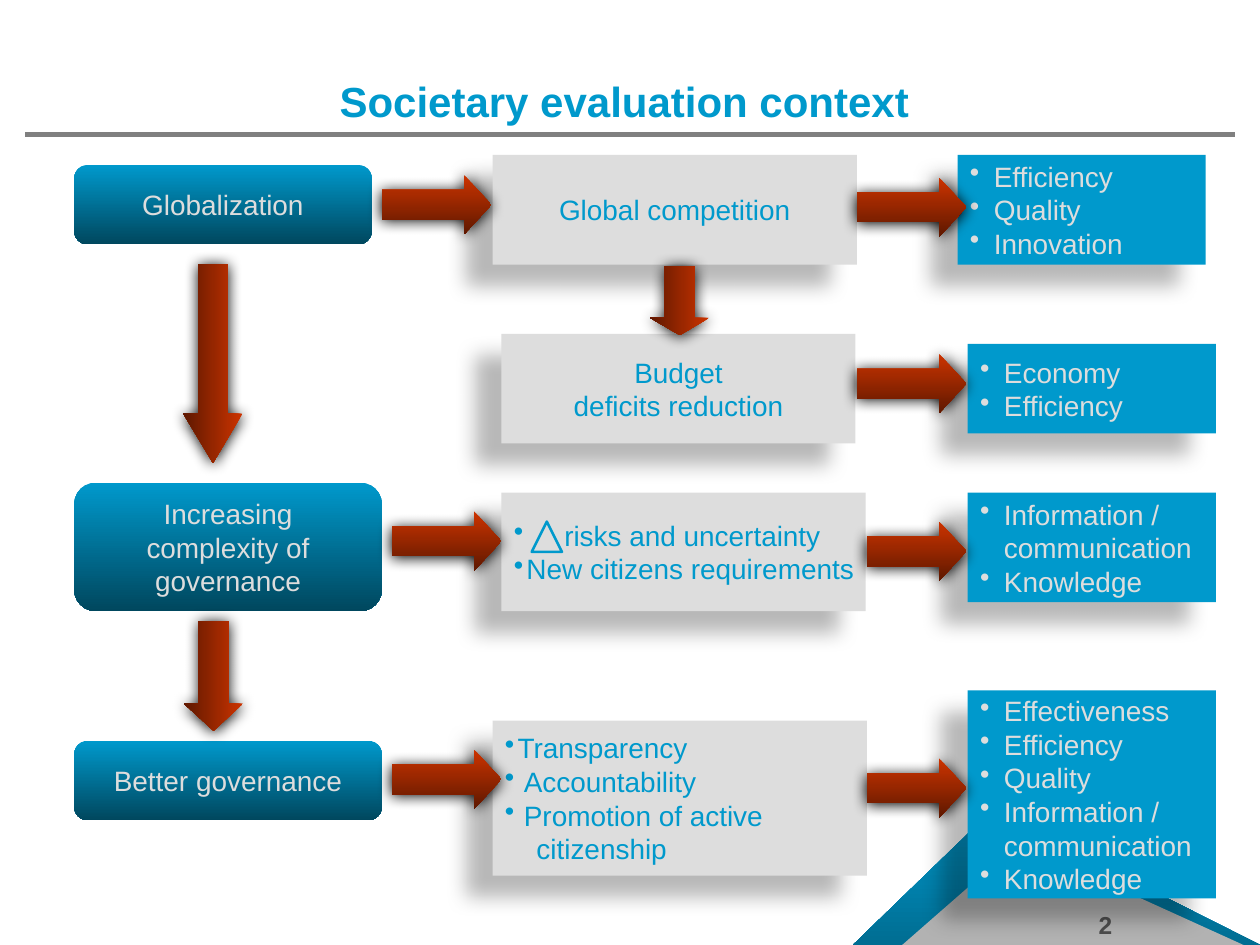
"""Build the slide on the societary context of evaluation."""
from dataclasses import dataclass

import lxml.etree
import pptx
import pptx.dml.color
import pptx.enum.shapes
import pptx.enum.text
import pptx.oxml.ns
import pptx.util

Inches = pptx.util.Inches
Shapes = pptx.enum.shapes.MSO_SHAPE
Align = pptx.enum.text.PP_ALIGN
Anchor = pptx.enum.text.MSO_ANCHOR
qn = pptx.oxml.ns.qn

BLUE, GREY = "0099CC", "DDDDDD"
BOX_SHADOW = {"alpha": 28, "blurRad": 11.8, "dist": 19.7, "dir": 141}
ARROW_SHADOW = {"alpha": 100, "blurRad": 8.5, "dist": 1, "dir": 90}


@dataclass
class Place:
    left: float
    top: float
    width: float
    height: float

    def lengths(self) -> list:
        return [Inches(v) for v in (self.left, self.top, self.width, self.height)]


@dataclass
class Line:
    text: str
    margin: float = 0
    bullet: bool = False


@dataclass
class Box:
    place: Place
    lines: list
    fill: str
    ink: str


@dataclass
class Arrow:
    place: Place
    head: float = 0.459
    rotation: int = 0


def plain(*texts: str) -> list:
    return [Line(text) for text in texts]


def bullets(margin: float, *texts: str) -> list:
    return [Line(text, margin, True) for text in texts]


def color(value: str) -> pptx.dml.color.RGBColor:
    return pptx.dml.color.RGBColor.from_string(value)


def assign(target, values: dict) -> None:
    for name, value in values.items():
        setattr(target, name, value)


def paint(shape, *fills: str) -> None:
    if len(fills) == 1:
        shape.fill.solid()
        shape.fill.fore_color.rgb = color(fills[0])
        return
    shape.fill.gradient()
    shape.fill.gradient_angle = 270
    for position, (stop, value) in enumerate(zip(shape.fill.gradient_stops, fills)):
        stop.position = position
        stop.color.rgb = color(value)


def add_shape(page, kind, place: Place, *fills: str):
    shape = page.shapes.add_shape(kind, *place.lengths())
    shape.shadow.inherit = False
    paint(shape, *fills)
    shape.line.fill.background()
    return shape


def cast_shadow(shape, values: dict) -> None:
    effects = shape._element.spPr.find(qn("a:effectLst"))
    shadow = lxml.etree.SubElement(effects, qn("a:outerShdw"), algn="ctr", rotWithShape="0")
    for name in ("blurRad", "dist"):
        shadow.set(name, str(int(pptx.util.Pt(values[name]))))
    shadow.set("dir", str(values["dir"] * 60000))
    tint = lxml.etree.SubElement(shadow, qn("a:srgbClr"), val="000000")
    lxml.etree.SubElement(tint, qn("a:alpha"), val=str(values["alpha"] * 1000))


def write(shape, lines: list, ink: str, align, frame: dict, size: int = 16, bold: bool = False) -> None:
    assign(shape.text_frame, frame)
    for index, line in enumerate(lines):
        para = shape.text_frame.add_paragraph() if index else shape.text_frame.paragraphs[0]
        para.alignment = align
        if line.margin:
            properties = para._p.get_or_add_pPr()
            margin = int(Inches(line.margin))
            properties.set("marL", str(margin))
            properties.set("indent", str(-margin if line.bullet else 0))
        if line.bullet:
            lxml.etree.SubElement(properties, qn("a:buChar"), char="•")
        span = para.add_run()
        span.text = line.text
        assign(span.font, {"name": "Arial", "size": pptx.util.Pt(size), "bold": bold})
        span.font.color.rgb = color(ink)


def add_label(page, place: Place, text: str, ink: str, align, size: int) -> None:
    label = page.shapes.add_textbox(*place.lengths())
    write(label, plain(text), ink, align, {"word_wrap": True}, size, True)


def add_backdrop(page) -> None:
    peaks = [(Place(6.77, 6.43, 3.23, 1.07), (BLUE, "006D92")),
             (Place(7.16, 6.69, 2.71, 0.81), ("B2B2B2",))]
    for place, fills in peaks:
        peak = add_shape(page, Shapes.ISOSCELES_TRIANGLE, place, *fills)
        peak.adjustments[0] = 0.342
    rule = page.shapes.add_connector(
        pptx.enum.shapes.MSO_CONNECTOR.STRAIGHT,
        Inches(0.2), Inches(1.07), Inches(9.8), Inches(1.07))
    rule.line.color.rgb = color("808080")
    rule.line.width = pptx.util.Pt(3)
    lxml.etree.SubElement(rule._element.spPr, qn("a:effectLst"))


def add_box(page, box: Box, kind, align, *fills: str):
    shape = add_shape(page, kind, box.place, *fills)
    write(shape, box.lines, box.ink, align, {"word_wrap": False, "vertical_anchor": Anchor.MIDDLE})
    return shape


def add_arrow(page, arrow: Arrow) -> None:
    shape = add_shape(page, Shapes.RIGHT_ARROW, arrow.place, "CC3300", "5E1800")
    shape.adjustments[0] = 0.5
    shape.adjustments[1] = arrow.head
    shape.rotation = arrow.rotation
    cast_shadow(shape, ARROW_SHADOW)


DRIVERS = [
    Box(Place(0.59, 1.31, 2.36, 0.63), plain("Globalization"), BLUE, GREY),
    Box(Place(0.59, 3.83, 2.44, 1.02), plain("Increasing", "complexity of", "governance"), BLUE, GREY),
    Box(Place(0.59, 5.88, 2.44, 0.63), plain("Better governance"), BLUE, GREY),
]
COMMUNICATION = bullets(0.19, "Information /") + [Line("communication", 0.19)] + bullets(0.19, "Knowledge")
EFFECTS = [
    Box(Place(3.91, 1.23, 2.89, 0.87), plain("Global competition"), GREY, BLUE),
    Box(Place(3.98, 2.65, 2.81, 0.87), plain("Budget", "deficits reduction"), GREY, BLUE),
    Box(Place(3.98, 3.91, 2.89, 0.94),
        bullets(0.4, "risks and uncertainty") + bullets(0.1, "New citizens requirements"), GREY, BLUE),
    Box(Place(3.91, 5.72, 2.97, 1.23),
        bullets(0.1, "Transparency") + bullets(0.15, "Accountability", "Promotion of active")
        + [Line("citizenship", 0.25)], GREY, BLUE),
    Box(Place(7.6, 1.23, 1.97, 0.87), bullets(0.19, "Efficiency", "Quality", "Innovation"), BLUE, GREY),
    Box(Place(7.68, 2.73, 1.97, 0.71), bullets(0.19, "Economy", "Efficiency"), BLUE, GREY),
    Box(Place(7.68, 3.91, 1.97, 0.87), COMMUNICATION, BLUE, GREY),
    Box(Place(7.68, 5.48, 1.97, 1.65),
        bullets(0.19, "Effectiveness", "Efficiency", "Quality") + COMMUNICATION, BLUE, GREY),
]
ACROSS = [(3.11, 5.95, 0.87), (3.11, 4.06, 0.87), (3.03, 1.39, 0.87), (6.8, 1.41, 0.87),
          (6.8, 2.81, 0.87), (6.88, 4.14, 0.79), (6.88, 6.02, 0.79)]
ARROWS = [
    Arrow(Place(0.9, 2.65, 1.58, 0.47), 0.835, 90),
    Arrow(Place(1.26, 5.13, 0.87, 0.47), 0.459, 90),
    *[Arrow(Place(left, top, width, 0.47)) for left, top, width in ACROSS],
    Arrow(Place(5.12, 2.15, 0.55, 0.47), 0.292, 90),
]


def main() -> None:
    deck = pptx.Presentation()
    assign(deck, {"slide_width": Inches(10), "slide_height": Inches(7.5)})
    page = deck.slides.add_slide(deck.slide_layouts[6])
    add_backdrop(page)
    add_label(page, Place(8.62, 7.17, 0.55, 0.33), "2", "4D4D4D", Align.LEFT, 14)
    add_label(page, Place(0.31, 0.55, 9.29, 0.5), "Societary evaluation context", BLUE, Align.CENTER, 24)
    for box in DRIVERS:
        add_box(page, box, Shapes.FLOWCHART_ALTERNATE_PROCESS, Align.CENTER, box.fill, "00475E")
    for box in EFFECTS:
        align = Align.LEFT if box.lines[0].bullet else Align.CENTER
        cast_shadow(add_box(page, box, Shapes.RECTANGLE, align, box.fill), BOX_SHADOW)
    delta = add_shape(page, Shapes.FLOWCHART_EXTRACT, Place(4.22, 4.14, 0.24, 0.24), GREY)
    delta.line.color.rgb = color(BLUE)
    delta.line.width = pptx.util.Pt(1.5)
    for arrow in ARROWS:
        add_arrow(page, arrow)
    deck.save("out.pptx")


if __name__ == "__main__":
    main()
